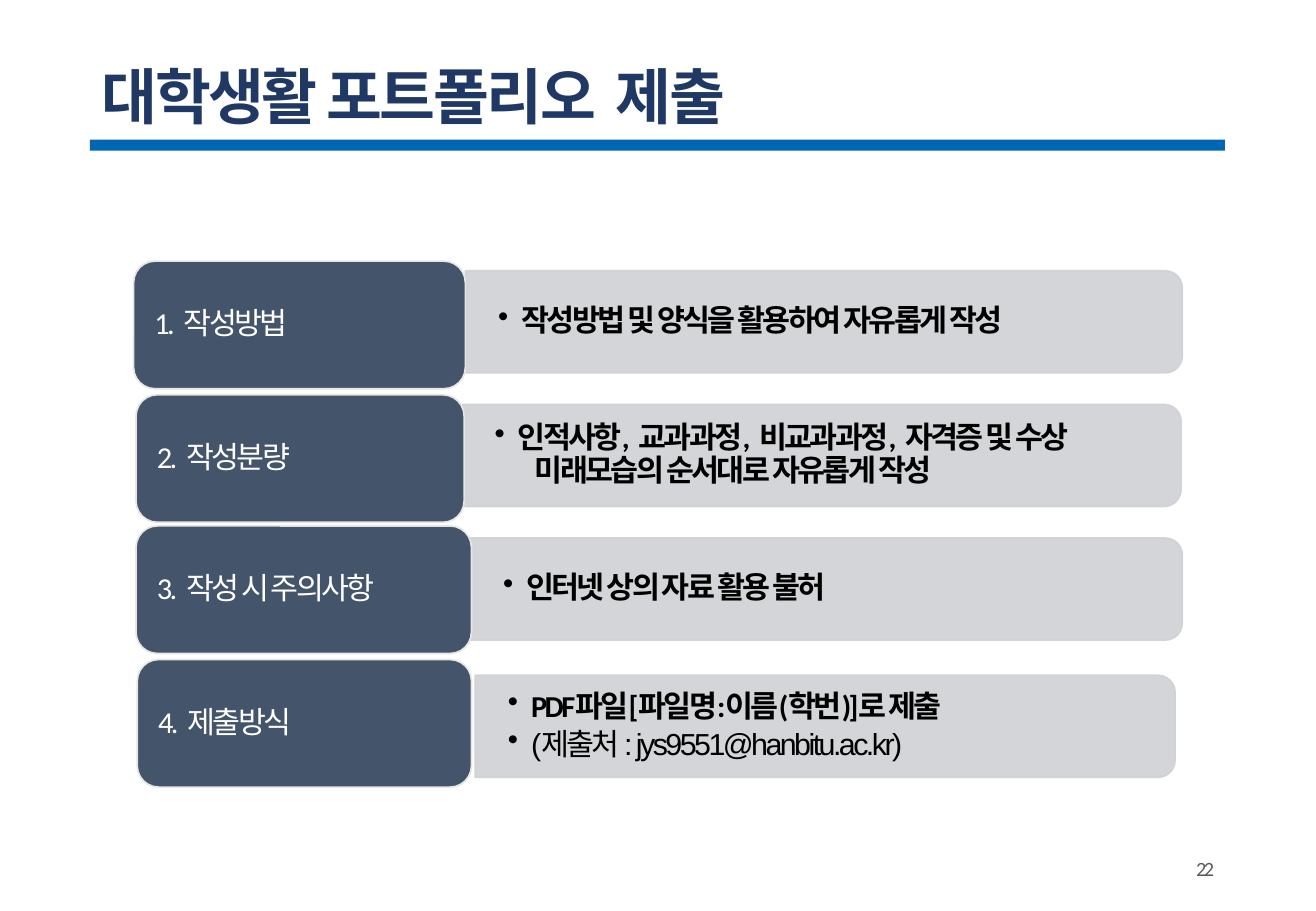
from dataclasses import dataclass

from lxml.etree import SubElement
from pptx import Presentation
from pptx.dml.color import RGBColor
from pptx.dml.fill import FillFormat
from pptx.enum.shapes import MSO_SHAPE
from pptx.enum.text import MSO_ANCHOR, PP_ALIGN
from pptx.oxml.ns import qn
from pptx.shapes.autoshape import Shape
from pptx.slide import Slide
from pptx.text.text import TextFrame, _Paragraph
from pptx.util import Emu, Pt

PX = 9144  # 100 px to the inch
COLOURS = {
    "bar": "0065B3",
    "title": "203864",
    "label": "44546A",
    "label_edge": "E7E6E6",
    "panel": "CFD1D4",
    "white": "FFFFFF",
    "black": "000000",
    "number": "595959",
}
PANEL_HEIGHT = 84
PANEL_TEXT_HEIGHT = 76
LABEL_HEIGHT = 105
BULLET_INDENT = 19
CONTINUATION_INDENT = 33


@dataclass(frozen=True)
class Box:
    left: int
    top: int
    width: int
    height: int

    def emu(self) -> list[Emu]:
        return [px(n) for n in (self.left, self.top, self.width, self.height)]


@dataclass(frozen=True)
class Style:
    size: int
    colour: str
    font: str = "Calibri"
    bold: bool = False


@dataclass(frozen=True)
class Line:
    text: str
    style: Style
    bullet: bool = True
    space_after: int = 3


@dataclass(frozen=True)
class Row:
    label: str
    label_left: int
    label_top: int
    label_width: int
    panel_left: int
    panel_width: int
    panel_middle: int
    lines: tuple[Line, ...]


TITLE = Style(36, "title", "Arial", True)
NUMBER = Style(12, "number")
LABEL = Style(18, "white")
STRONG = Style(18, "black", bold=True)
CONTACT = Style(18, "black", "Arial")

ROWS = (
    Row("1.  작성방법", 110, 215, 273, 383, 590, 265,
        (Line("작성방법 및 양식을 활용하여 자유롭게 작성", STRONG),)),
    Row("2.  작성분량", 112, 325, 270, 380, 592, 375,
        (Line("인적사항,  교과과정,  비교과과정,  자격증 및 수상", STRONG, space_after=0),
         Line("미래모습의 순서대로 자유롭게 작성", STRONG, bullet=False))),
    Row("3.  작성 시 주의사항", 112, 433, 276, 387, 586, 485,
        (Line("인터넷 상의 자료 활용 불허", STRONG),)),
    Row("4.  제출방식", 113, 543, 275, 391, 576, 598,
        (Line("PDF파일[파일명:이름(학번)]로 제출", STRONG),
         Line("(제출처 : jys9551@hanbitu.ac.kr)", CONTACT))),
)


def px(length: int) -> Emu:
    return Emu(length * PX)


def rgb(name: str) -> RGBColor:
    return RGBColor.from_string(COLOURS[name])


def paint(fill: FillFormat, colour: str) -> None:
    fill.solid()
    fill.fore_color.rgb = rgb(colour)


def add_block(page: Slide, kind: MSO_SHAPE, box: Box, colour: str, edge: str = "") -> Shape:
    block = page.shapes.add_shape(kind, *box.emu())
    block.shadow.inherit = False
    paint(block.fill, colour)
    if edge:
        paint(block.line.fill, edge)
        block.line.width = Pt(1)
    else:
        block.line.fill.background()
    return block


def set_frame(frame: TextFrame, side: int, end: int) -> None:
    frame.word_wrap = True
    frame.vertical_anchor = MSO_ANCHOR.MIDDLE
    frame.margin_left = frame.margin_right = px(side)
    frame.margin_top = frame.margin_bottom = px(end)


def write(para: _Paragraph, text: str, style: Style,
          align: PP_ALIGN = PP_ALIGN.LEFT, spacing: float = 0.9) -> None:
    para.text = text
    para.alignment = align
    para.line_spacing = spacing
    font = para.font
    font.name, font.size, font.bold = style.font, Pt(style.size), style.bold
    font.color.rgb = rgb(style.colour)
    for span in para.runs:
        span.font._element.set("spc", "-150")


def add_text(page: Slide, box: Box, side: int, end: int) -> TextFrame:
    frame = page.shapes.add_textbox(*box.emu()).text_frame
    set_frame(frame, side, end)
    return frame


def set_bullet(para: _Paragraph, shown: bool) -> None:
    properties = para._p.get_or_add_pPr()
    indent = BULLET_INDENT if shown else CONTINUATION_INDENT
    properties.set("marL", str(px(indent)))
    properties.set("indent", str(px(-indent if shown else 0)))
    bullet = SubElement(properties, qn("a:buChar" if shown else "a:buNone"))
    if shown:
        bullet.set("char", "•")
    defaults = properties.find(qn("a:defRPr"))
    if defaults is not None:
        defaults.addprevious(bullet)


def add_panel(page: Slide, row: Row) -> None:
    """Draw the strip on its side, so that its round corners face right."""
    centre = row.panel_left + row.panel_width // 2
    box = Box(centre - PANEL_HEIGHT // 2, row.panel_middle - row.panel_width // 2,
              PANEL_HEIGHT, row.panel_width)
    panel = add_block(page, MSO_SHAPE.ROUND_2_SAME_RECTANGLE, box, "panel", "panel")
    panel.rotation = 90
    for colour in panel._element.spPr.iter(qn("a:srgbClr")):
        SubElement(colour, qn("a:alpha")).set("val", "90000")

    text_box = Box(row.panel_left, row.panel_middle - PANEL_TEXT_HEIGHT // 2,
                   row.panel_width - 4, PANEL_TEXT_HEIGHT)
    frame = add_text(page, text_box, 27, 14)
    for index, line in enumerate(row.lines):
        para = frame.add_paragraph() if index else frame.paragraphs[0]
        write(para, line.text, line.style)
        para.level = 1
        para.space_after = Pt(line.space_after)
        set_bullet(para, line.bullet)


def add_label(page: Slide, row: Row) -> None:
    box = Box(row.label_left, row.label_top, row.label_width, LABEL_HEIGHT)
    label = add_block(page, MSO_SHAPE.ROUNDED_RECTANGLE, box, "label", "label_edge")
    set_frame(label.text_frame, 12, 9)
    write(label.text_frame.paragraphs[0], row.label, LABEL)


def main() -> None:
    deck = Presentation()
    deck.slide_width, deck.slide_height = px(1083), px(750)
    page = deck.slides.add_slide(deck.slide_layouts[6])

    add_block(page, MSO_SHAPE.RECTANGLE, Box(74, 115, 934, 9), "bar")
    number = add_text(page, Box(765, 695, 244, 40), 10, 5)
    write(number.paragraphs[0], "22", NUMBER, PP_ALIGN.RIGHT, 1.0)
    title = add_text(page, Box(74, 40, 934, 84), 10, 5)
    write(title.paragraphs[0], "대학생활 포트폴리오  제출", TITLE)

    for row in ROWS:
        add_panel(page, row)
        add_label(page, row)

    deck.save("out.pptx")


if __name__ == "__main__":
    main()
